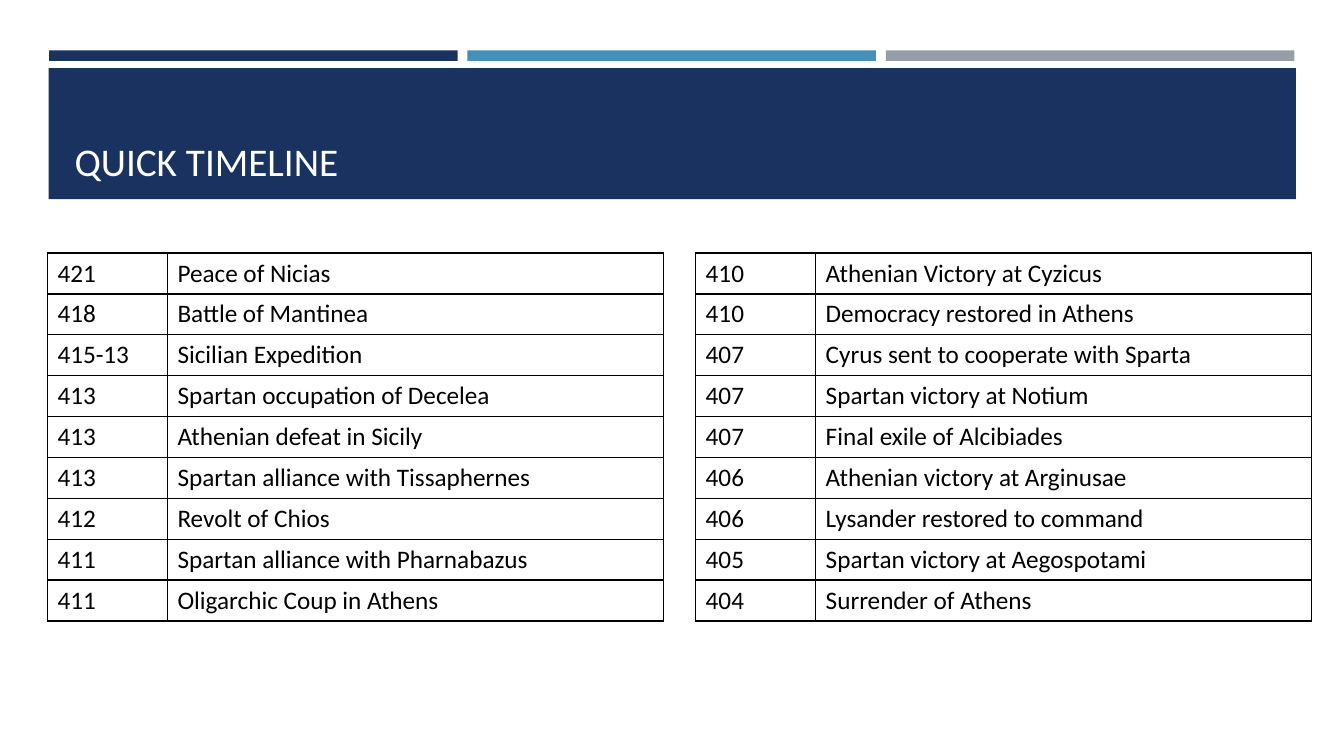
from dataclasses import dataclass

from lxml import etree
from pptx import Presentation
from pptx.dml.color import RGBColor
from pptx.enum.shapes import MSO_SHAPE
from pptx.enum.text import MSO_ANCHOR, MSO_AUTO_SIZE, PP_ALIGN
from pptx.oxml.ns import qn
from pptx.util import Inches, Pt

RECT = MSO_SHAPE.RECTANGLE
LEFT = PP_ALIGN.LEFT
BOTTOM, MIDDLE = MSO_ANCHOR.BOTTOM, MSO_ANCHOR.MIDDLE
NO_FIT = MSO_AUTO_SIZE.NONE
TITLE_ONLY = 5


@dataclass(frozen=True)
class Theme:
    font: str = "Calibri"
    navy: str = "1A3260"
    blue: str = "4590B8"
    grey: str = "969FA7"
    white: str = "FFFFFF"
    black: str = "000000"
    title_size: int = 28
    table_size: int = 18
    border: int = 1


class SlideBuilder:
    """Places elements by percentages of the slide's width and height."""

    def __init__(self, prs, theme):
        self.prs, self.theme = prs, theme
        self.s = prs.slides.add_slide(prs.slide_layouts[TITLE_ONLY])

    def x(self, share):
        return round(self.prs.slide_width * share / 100)

    def y(self, share):
        return round(self.prs.slide_height * share / 100)

    def box(self, left, top, width, height):
        return self.x(left), self.y(top), self.x(width), self.y(height)

    def add_text(self, tf, text, size, color):
        p = tf.paragraphs[0]
        p.alignment = LEFT
        r = p.add_run()
        r.text = text
        formats = {"name": self.theme.font, "size": Pt(size), "bold": False}
        for name, value in formats.items():
            setattr(r.font, name, value)
        r.font.color.rgb = RGBColor.from_string(color)

    def bar(self, left, top, width, height, color):
        sp = self.s.shapes.add_shape(RECT, *self.box(left, top, width, height))
        sp.shadow.inherit = False
        sp.fill.solid()
        sp.fill.fore_color.rgb = RGBColor.from_string(color)
        sp.line.fill.background()

    def title(self, text, left, top, width, height):
        sp = self.s.shapes.title
        places = zip(("left", "top", "width", "height"),
                     self.box(left, top, width, height))
        for name, value in places:
            setattr(sp, name, value)
        tf = sp.text_frame
        formats = {"vertical_anchor": BOTTOM, "word_wrap": True,
                   "auto_size": NO_FIT}
        for name, value in formats.items():
            setattr(tf, name, value)
        self.add_text(tf, text, self.theme.title_size, self.theme.white)
        # Bring the title in front of its band
        sp.element.getparent().append(sp.element)

    def table(self, rows, left, top, col_widths, row_height):
        frame = self.s.shapes.add_table(
            len(rows), len(col_widths),
            *self.box(left, top, sum(col_widths), row_height * len(rows)))
        table = frame.table
        table.first_row = table.horz_banding = False
        for col, width in zip(table.columns, col_widths):
            col.width = self.x(width)
        for row, texts in zip(table.rows, rows):
            row.height = self.y(row_height)
            for cell, text in zip(row.cells, texts):
                self.add_text(cell.text_frame, text, self.theme.table_size,
                              self.theme.black)
                cell.vertical_anchor = MIDDLE
                self.borders(cell)
                cell.fill.background()

    def borders(self, cell):
        tc_pr = cell._tc.get_or_add_tcPr()
        for side in ("lnL", "lnR", "lnT", "lnB"):
            ln = etree.SubElement(tc_pr, qn(f"a:{side}"),
                                  w=str(Pt(self.theme.border)))
            fill = etree.SubElement(ln, qn("a:solidFill"))
            etree.SubElement(fill, qn("a:srgbClr"), val=self.theme.black)


TIMELINES = [
    [
        ("421", "Peace of Nicias"),
        ("418", "Battle of Mantinea"),
        ("415-13", "Sicilian Expedition"),
        ("413", "Spartan occupation of Decelea"),
        ("413", "Athenian defeat in Sicily"),
        ("413", "Spartan alliance with Tissaphernes"),
        ("412", "Revolt of Chios"),
        ("411", "Spartan alliance with Pharnabazus"),
        ("411", "Oligarchic Coup in Athens"),
    ],
    [
        ("410", "Athenian Victory at Cyzicus"),
        ("410", "Democracy restored in Athens"),
        ("407", "Cyrus sent to cooperate with Sparta"),
        ("407", "Spartan victory at Notium"),
        ("407", "Final exile of Alcibiades"),
        ("406", "Athenian victory at Arginusae"),
        ("406", "Lysander restored to command"),
        ("405", "Spartan victory at Aegospotami"),
        ("404", "Surrender of Athens"),
    ],
]


def main():
    prs = Presentation()
    prs.slide_width, prs.slide_height = Inches(13.33), Inches(7.5)
    theme = Theme()
    slide = SlideBuilder(prs, theme)

    # Three accent bars
    for i, color in enumerate((theme.navy, theme.blue, theme.grey)):
        slide.bar(3.65 + 31.13 * i, 6.67, 30.4, 1.4, color)

    # Title band
    slide.bar(3.63, 9, 92.8, 17.33, theme.navy)
    slide.title("QUICK TIMELINE", 4.8, 10.27, 90.47, 14.8)

    # Timeline tables, side by side
    for i, rows in enumerate(TIMELINES):
        slide.table(rows, 3.53 + 48.23 * i, 33.47, (8.93, 36.9), 5.41)

    prs.save("out.pptx")


if __name__ == "__main__":
    main()
